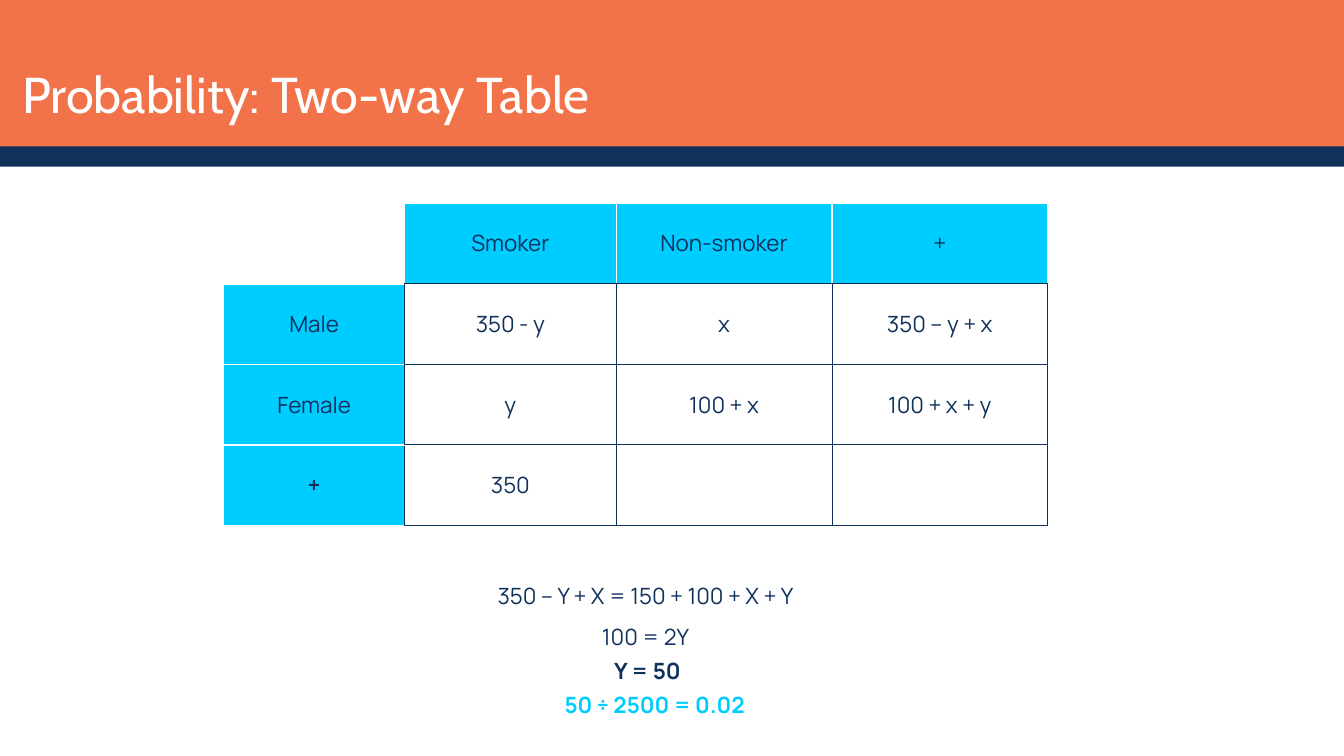
from lxml import etree
from pptx import Presentation
from pptx.dml.color import RGBColor
from pptx.enum.shapes import MSO_SHAPE as Shape
from pptx.enum.text import MSO_ANCHOR as Anchor, PP_ALIGN as Align
from pptx.oxml.ns import qn
from pptx.util import Inches, Pt

ORANGE = RGBColor(0xF2, 0x73, 0x49)
NAVY = RGBColor(0x10, 0x31, 0x5C)
CYAN = RGBColor(0x00, 0xCD, 0xFF)
WHITE = RGBColor(0xFF, 0xFF, 0xFF)

ROWS = [
    ["", "Smoker", "Non-smoker", "+"],
    ["Male", "350 - y", "x", "350 – y + x"],
    ["Female", "y", "100 + x", "100 + x + y"],
    ["+", "350", "", ""],
]
COLUMN_WIDTHS = [2.69, 3.15, 3.21, 3.21]
THICK_EDGES = {
    (0, 0, "B"): 3,
    (0, 2, "R"): 2.25, (0, 3, "L"): 2.25,
    (2, 0, "B"): 2.25, (3, 0, "T"): 2.25,
}
# Left, top, text, colour, bold
STEPS = [
    (6.58, 8.66, "350 – Y + X = 150 + 100 + X + Y", NAVY, False),
    (6.58, 9.28, "100 = 2Y", NAVY, False),
    (6.61, 9.78, "Y = 50", NAVY, True),
    (6.75, 10.28, "50 ÷ 2500 = 0.02 ", CYAN, True),
]


def write(frame, text, font="Manrope", size=24, color=NAVY, bold=False,
          align=Align.CENTER, anchor=Anchor.TOP, line_spacing=None, margin=0):
    frame.word_wrap = True
    frame.vertical_anchor = anchor
    frame.margin_left = frame.margin_right = Inches(margin)
    frame.margin_top = frame.margin_bottom = Inches(margin)
    paragraph = frame.paragraphs[0]
    paragraph.alignment = align
    paragraph.line_spacing = line_spacing
    run = paragraph.add_run()
    run.text = text
    run.font.name = font
    run.font.size = Pt(size)
    run.font.bold = bold
    run.font.color.rgb = color


def add_band(slide, left, top, width, height, color):
    band = slide.shapes.add_shape(Shape.RECTANGLE, Inches(left), Inches(top),
                                  Inches(width), Inches(height))
    band.shadow.inherit = False
    band.fill.solid()
    band.fill.fore_color.rgb = color
    band.line.fill.background()


def add_header(slide, left, top, width, height):
    add_band(slide, left, top, width, height, ORANGE)
    add_band(slide, left, top + height - 0.25, width + 0.27, 0.3, NAVY)
    title = slide.shapes.title
    title.left, title.top = Inches(left + 0.33), Inches(top + 0.53)
    title.width, title.height = Inches(width - 0.83), Inches(1.14)
    write(title.text_frame, "Probability: Two-way Table", font="Cabin", size=54,
          color=WHITE, align=Align.LEFT, line_spacing=Pt(93.8))
    # The title has to lie in front of the bands
    title.element.getparent().append(title.element)


def set_borders(cell, row, column):
    """Navy lines around the body cells, white ones between the headings."""
    properties = cell._tc.get_or_add_tcPr()
    is_body = row > 0 and column > 0
    faces_body = {"R": row > 0, "B": column > 0}
    for index, side in enumerate("LRTB"):
        navy = is_body or faces_body.get(side, False) and (
            column == 0 if side == "R" else row == 0)
        width = THICK_EDGES.get((row, column, side), 1)
        line = etree.Element(qn(f"a:ln{side}"), w=str(Pt(width)))
        fill = etree.SubElement(line, qn("a:solidFill"))
        etree.SubElement(fill, qn("a:srgbClr"), val=str(NAVY if navy else WHITE))
        properties.insert(index, line)


def add_two_way_table(slide, left, top, width, height):
    table = slide.shapes.add_table(len(ROWS), len(COLUMN_WIDTHS), Inches(left),
                                   Inches(top), Inches(width), Inches(height)).table
    table.first_row = table.horz_banding = False
    for column, column_width in zip(table.columns, COLUMN_WIDTHS):
        column.width = Inches(column_width)
    for row, texts in enumerate(ROWS):
        table.rows[row].height = Inches(height / len(ROWS))
        for column, text in enumerate(texts):
            cell = table.cell(row, column)
            if row == column == 0:
                cell.fill.background()
            else:
                cell.fill.solid()
                is_heading = row == 0 or column == 0
                cell.fill.fore_color.rgb = CYAN if is_heading else WHITE
            if text:
                write(cell.text_frame, text, bold=(row == 3 and column == 0),
                      margin=0.1)
                cell.vertical_anchor = Anchor.MIDDLE
            set_borders(cell, row, column)


def add_steps(slide, width, height):
    for left, top, text, color, bold in STEPS:
        box = slide.shapes.add_textbox(Inches(left), Inches(top),
                                       Inches(width), Inches(height))
        write(box.text_frame, text, color=color, bold=bold)


def main():
    presentation = Presentation()
    presentation.slide_width = Inches(20)
    presentation.slide_height = Inches(11.25)
    slide = presentation.slides.add_slide(presentation.slide_layouts[5])
    add_header(slide, 0, 0, 20, 2.43)
    add_two_way_table(slide, 3.33, 3.02, 12.26, 4.8)
    add_steps(slide, 6.05, 0.4)
    presentation.save("out.pptx")


if __name__ == "__main__":
    main()
